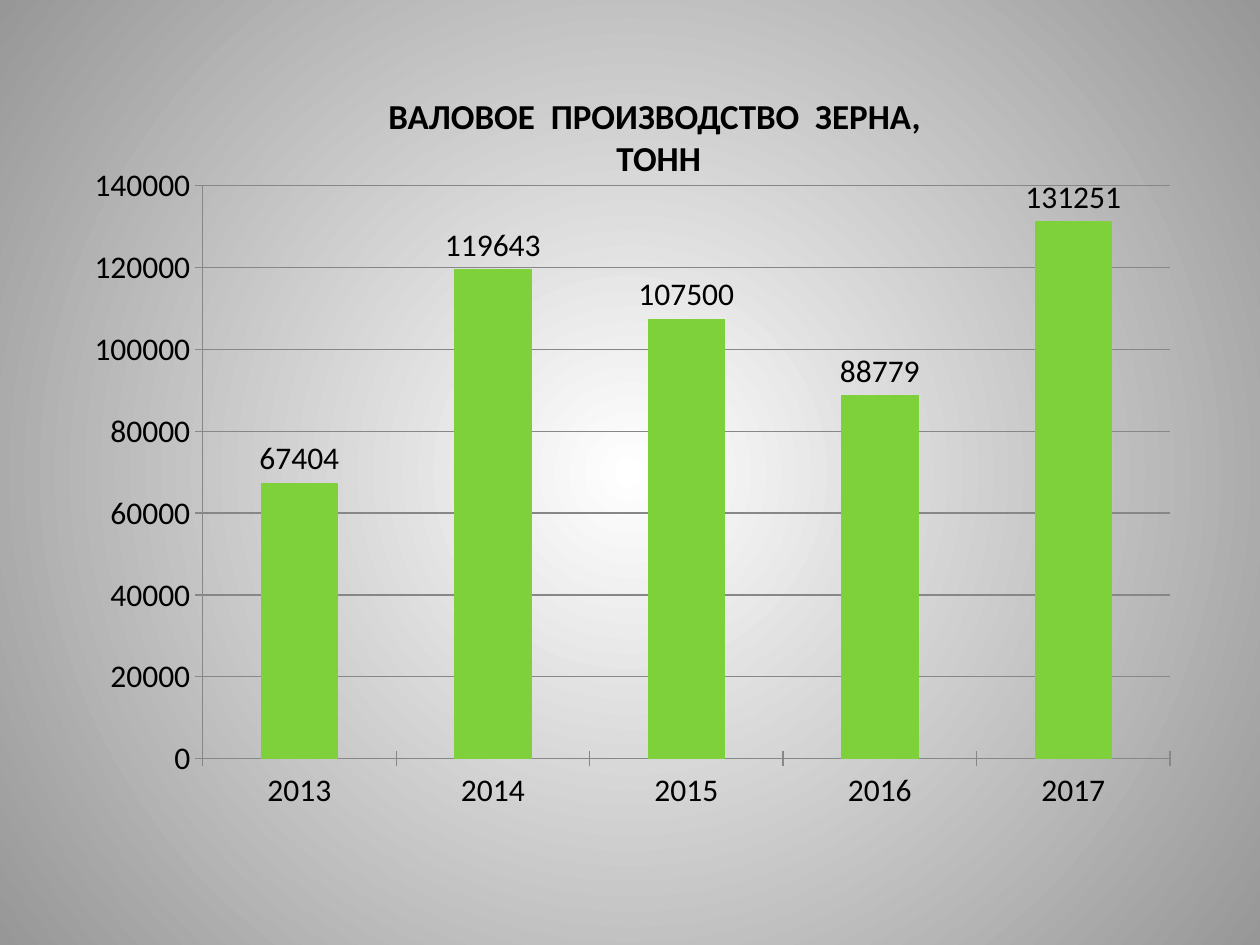
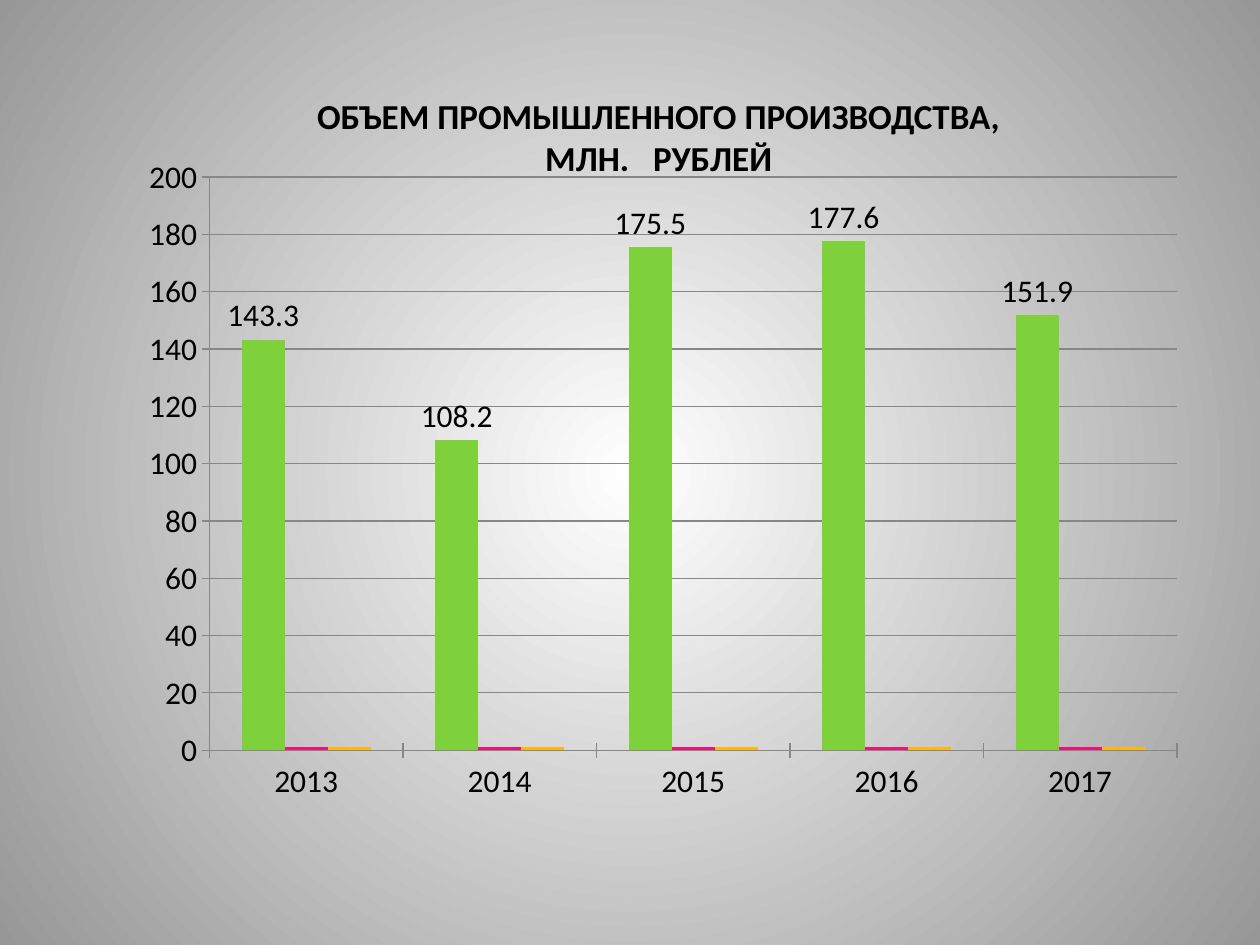
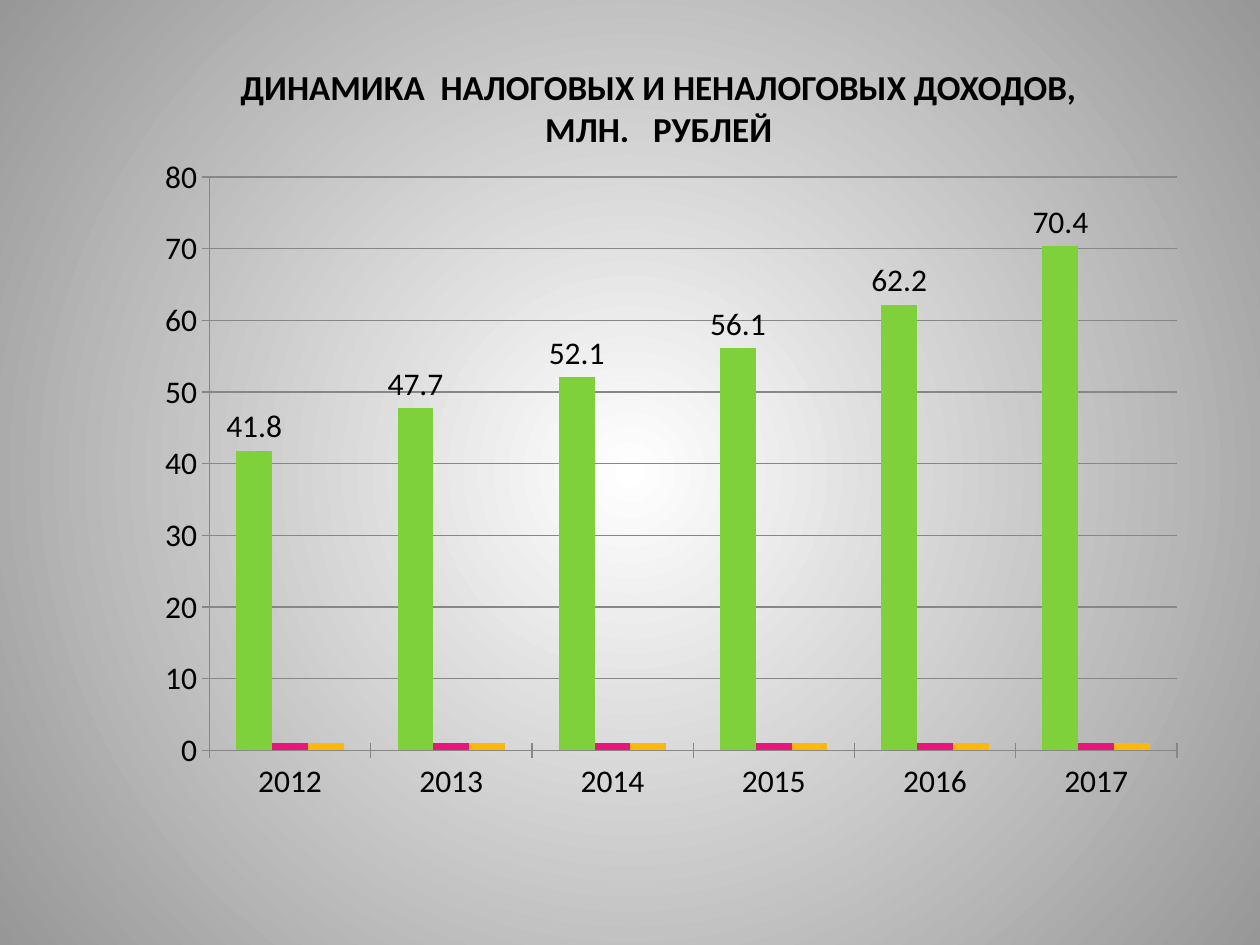
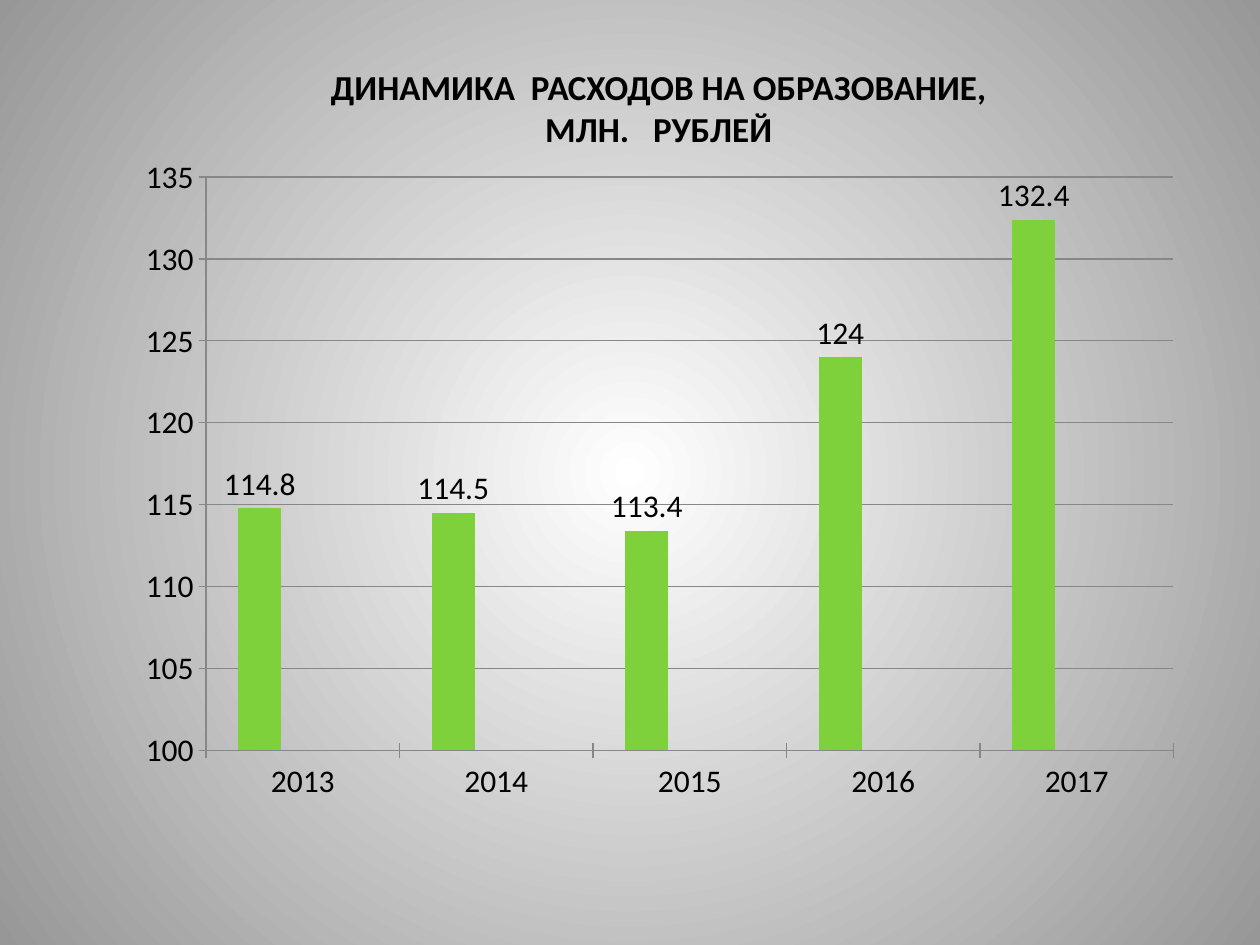
from lxml.etree import SubElement
from pptx import Presentation
from pptx.chart.data import CategoryChartData
from pptx.dml.color import RGBColor
from pptx.enum.chart import XL_CHART_TYPE, XL_LABEL_POSITION, XL_TICK_MARK
from pptx.enum.text import MSO_AUTO_SIZE, PP_ALIGN
from pptx.oxml import parse_xml
from pptx.oxml.ns import nsdecls, qn
from pptx.util import Cm, Pt

BLACK = RGBColor(0x00, 0x00, 0x00)
WHITE = RGBColor(0xFF, 0xFF, 0xFF)
EDGE_GRAY = RGBColor(0x97, 0x97, 0x97)
LINE_GRAY = RGBColor(0x87, 0x87, 0x87)
GREEN = RGBColor(0x7F, 0xD1, 0x3B)
PINK = RGBColor(0xEA, 0x15, 0x7A)
AMBER = RGBColor(0xFE, 0xB8, 0x0A)
SERIES_COLORS = (GREEN, PINK, AMBER)
FONT = "Calibri"
YEARS = ["2013", "2014", "2015", "2016", "2017"]
MILLIONS = "МЛН.   РУБЛЕЙ"
LOW_TITLE, HIGH_TITLE = Cm(1.78), Cm(1.19)


def add_slide(prs):
    s = prs.slides.add_slide(prs.slide_layouts[6])
    fill = s.background.fill
    fill.gradient()
    for stop, color in zip(fill.gradient_stops, (WHITE, EDGE_GRAY)):
        stop.color.rgb = color
    grad = next(s.element.iter(qn("a:gradFill")))
    grad.replace(grad.find(qn("a:lin")), parse_xml(
        f'<a:path {nsdecls("a")} path="circle">'
        '<a:fillToRect l="50000" t="50000" r="50000" b="50000"/></a:path>'))
    return s


def set_font(font, size, bold=False, color=BLACK):
    font.name = FONT
    font.size = Pt(size)
    font.bold = bold
    font.color.rgb = color


def add_text(s, lines, *, top, size=20, bold=True, align=PP_ALIGN.CENTER):
    sp = s.shapes.add_textbox(Cm(3.96), top, Cm(18.64), Cm(1.96))
    tf = sp.text_frame
    tf.word_wrap = True
    tf.auto_size = MSO_AUTO_SIZE.SHAPE_TO_FIT_TEXT
    for i, line in enumerate(lines):
        p = tf.paragraphs[0] if i == 0 else tf.add_paragraph()
        p.alignment = align
        r = p.add_run()
        r.text = line
        set_font(r.font, size, bold)


def set_plot_area(chart, x, y, w=0.855, h=0.808):
    area = next(chart.element.iter(qn("c:plotArea")))
    for old in area.findall(qn("c:layout")):
        area.remove(old)
    layout = parse_xml(f'<c:layout {nsdecls("c")}><c:manualLayout/></c:layout>')
    values = dict(layoutTarget="inner", xMode="edge", yMode="edge", x=x, y=y, w=w, h=h)
    for tag, value in values.items():
        SubElement(layout[0], qn(f"c:{tag}")).set("val", str(value))
    area.insert(0, layout)


def add_columns(s, categories, series, *, plot, limits=None):
    data = CategoryChartData()
    data.categories = categories
    for i, values in enumerate(series, 1):
        data.add_series(f"Series {i}", values)
    chart = s.shapes.add_chart(XL_CHART_TYPE.COLUMN_CLUSTERED, Cm(1.19), Cm(2.77),
                               Cm(22.81), Cm(14.3), data).chart
    chart.has_title = False
    chart.has_legend = False
    set_font(chart.font, 18)
    set_plot_area(chart, *plot)

    for axis in (chart.category_axis, chart.value_axis):
        axis.major_tick_mark = XL_TICK_MARK.CROSS
        axis.format.line.color.rgb = LINE_GRAY
    chart.value_axis.has_major_gridlines = True
    chart.value_axis.major_gridlines.format.line.color.rgb = LINE_GRAY
    if limits:
        chart.value_axis.minimum_scale, chart.value_axis.maximum_scale = limits

    columns = chart.plots[0]
    columns.vary_by_categories = False
    columns.gap_width = 150
    for ser, color in zip(columns.series, SERIES_COLORS):
        ser.format.fill.solid()
        ser.format.fill.fore_color.rgb = color
        ser.invert_if_negative = False
    labels = columns.series[0].data_labels
    labels.show_value = True
    labels.position = XL_LABEL_POSITION.OUTSIDE_END
    set_font(labels.font, 18)


def with_side_series(values, side):
    return [values] + [[side] * len(values)] * 2


def main():
    prs = Presentation()
    prs.slide_width, prs.slide_height = Cm(25.4), Cm(19.05)

    s = add_slide(prs)
    add_text(s, ["ВАЛОВОЕ  ПРОИЗВОДСТВО  ЗЕРНА, ", "ТОНН"], top=LOW_TITLE)
    add_columns(s, YEARS, [[67404, 119643, 107500, 88779, 131251]], plot=(0.127, 0.068))

    s = add_slide(prs)
    add_text(s, [" ОБЪЕМ ПРОМЫШЛЕННОГО ПРОИЗВОДСТВА, ", MILLIONS], top=LOW_TITLE)
    add_columns(s, YEARS, with_side_series([143.3, 108.2, 175.5, 177.6, 151.9], 1),
                plot=(0.133, 0.056))

    s = add_slide(prs)
    add_text(s, [" ДИНАМИКА  НАЛОГОВЫХ И НЕНАЛОГОВЫХ ДОХОДОВ, ", MILLIONS], top=HIGH_TITLE)
    add_columns(s, ["2012"] + YEARS,
                with_side_series([41.8, 47.7, 52.1, 56.1, 62.2, 70.4], 1),
                plot=(0.133, 0.056))

    s = add_slide(prs)
    add_columns(s, YEARS, with_side_series([114.8, 114.5, 113.4, 124, 132.4], None),
                plot=(0.13, 0.056), limits=(100, 135))
    add_text(s, [" ДИНАМИКА  РАСХОДОВ НА ОБРАЗОВАНИЕ, ", MILLIONS], top=HIGH_TITLE)

    prs.save("out.pptx")


if __name__ == "__main__":
    main()
